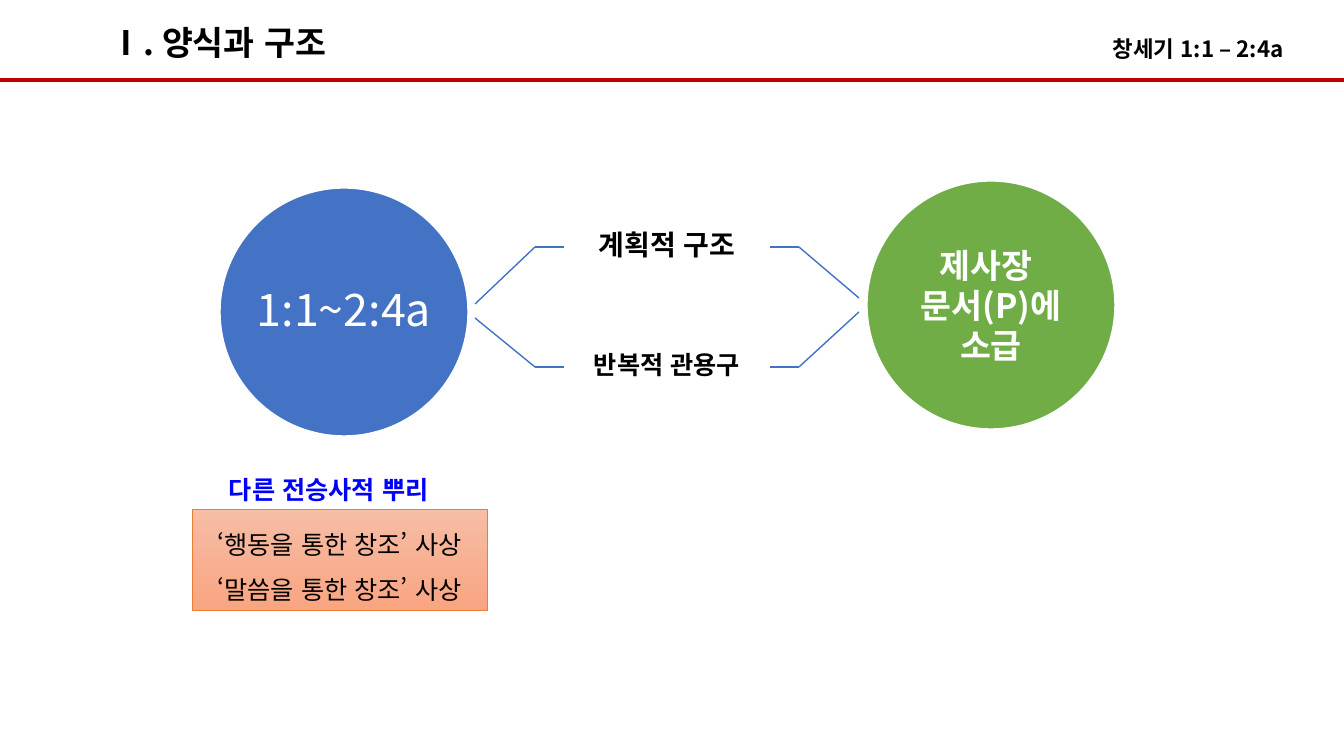
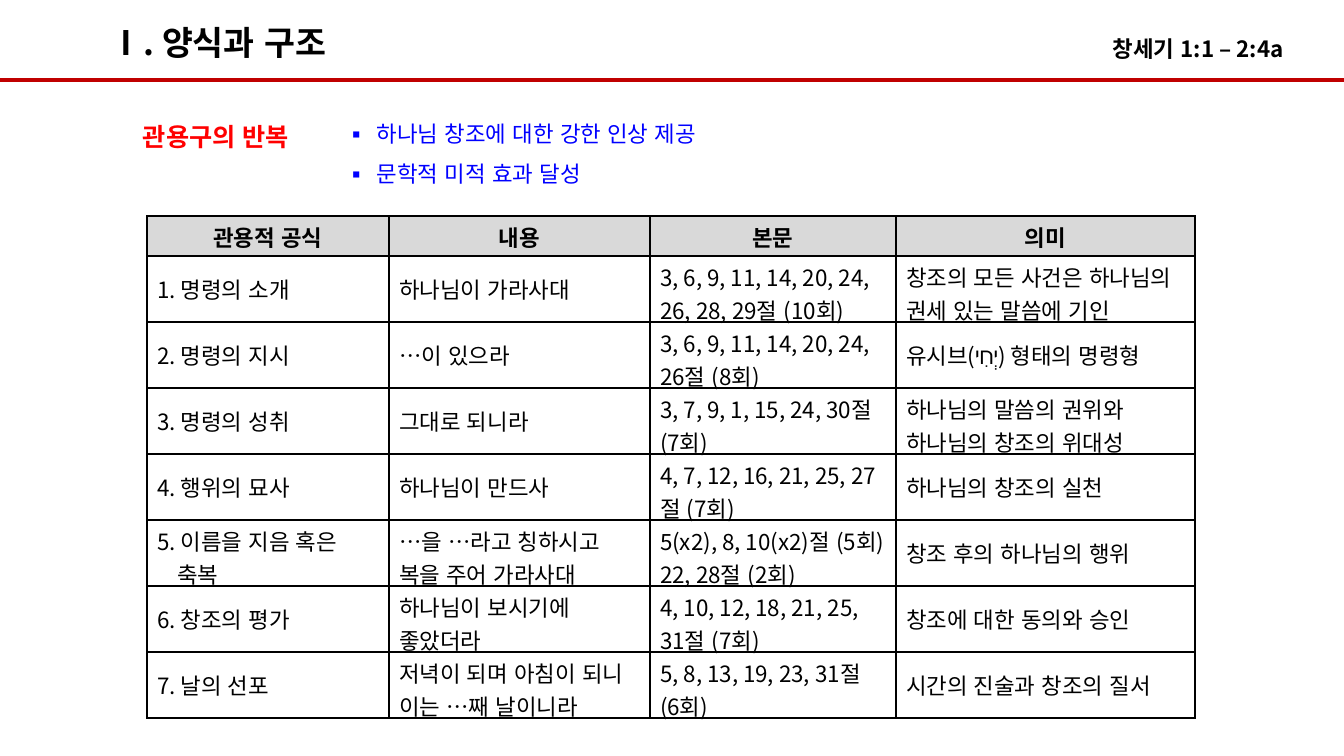
from pptx import Presentation
from pptx import util as u
from pptx.dml.color import RGBColor
from pptx.enum import lang, shapes, text
from pptx.oxml import parse_xml
from pptx.oxml.ns import nsdecls, qn

PX = 12192000 / 1344
FONT = "Noto Sans CJK KR"
BLACK = RGBColor(0x00, 0x00, 0x00)
WHITE = RGBColor(0xFF, 0xFF, 0xFF)
DARK_RED = RGBColor(0xC0, 0x00, 0x00)
RED = RGBColor(0xFF, 0x00, 0x00)
BRIGHT_BLUE = RGBColor(0x00, 0x00, 0xFF)
BLUE = RGBColor(0x44, 0x72, 0xC4)
GREEN = RGBColor(0x70, 0xAD, 0x47)
ORANGE = RGBColor(0xED, 0x7D, 0x31)
PEACH_TOP = RGBColor(0xF7, 0xBD, 0xA5)
PEACH_BOTTOM = RGBColor(0xF8, 0xA5, 0x82)
HEADER_GREY = RGBColor(0xD9, 0xD9, 0xD9)
CENTER = text.PP_ALIGN.CENTER
MIDDLE = text.MSO_ANCHOR.MIDDLE


def px(*lengths):
    """Turn pixel lengths into a list of EMU lengths."""
    return [u.Emu(round(length * PX)) for length in lengths]


def write(frame, words, size, color=BLACK, bold=False, align=None, spacing=None):
    """Fill a text frame and format every paragraph alike, for Latin and Korean."""
    frame.text = words
    frame.word_wrap = True
    for paragraph in frame.paragraphs:
        paragraph.alignment = align
        paragraph.line_spacing = spacing
        for run in paragraph.runs:
            run.font.size = u.Pt(size)
            run.font.bold = bold
            run.font.color.rgb = color
            run.font.language_id = lang.MSO_LANGUAGE_ID.KOREAN
            run.font.name = FONT
            latin = run.font._element.find(qn("a:latin"))
            latin.addnext(parse_xml(f'<a:ea {nsdecls("a")} typeface="{FONT}"/>'))


prs = Presentation()
prs.slide_width, prs.slide_height = px(1344, 756)
structure, formulas = [prs.slides.add_slide(prs.slide_layouts[6]) for _ in range(2)]
lines = []  # slide, colour, width in points, ends in px

# Header shared by both slides
for slide in (structure, formulas):
    passage = slide.shapes.add_textbox(*px(1103, 17, 209, 50))
    write(passage.text_frame, "창세기 1:1 – 2:4a", 16, bold=True, spacing=1.5)
    title = slide.shapes.add_textbox(*px(100, 17, 257, 50))
    write(title.text_frame, "Ⅰ. 양식과 구조", 24, bold=True)
    lines.append((slide, DARK_RED, 2.25, (0, 80, 1344, 80)))

# Slide 1: two circles joined through two labels
for left, top, color, words, size, bold, spacing in (
    (220, 188, BLUE, "1:1~2:4a", 32, False, 0.9),
    (867, 181, GREEN, "제사장 \n문서(P)에\n소급", 24, True, None),
):
    circle = structure.shapes.add_shape(shapes.MSO_SHAPE.OVAL, *px(left, top, 248, 248))
    circle.shadow.inherit = False
    circle.fill.solid()
    circle.fill.fore_color.rgb = color
    circle.line.color.rgb = WHITE
    circle.line.width = u.Pt(1)
    frame = circle.text_frame
    frame.margin_left = frame.margin_right = frame.margin_top = frame.margin_bottom = 0
    frame.vertical_anchor = MIDDLE
    write(frame, words, size, WHITE, bold, CENTER, spacing)

for label_y, left_y, right_y, words, size in (
    (247, 304, 298, "계획적 구조", 20),
    (367, 318, 312, "반복적 관용구", 18),
):
    label = structure.shapes.add_textbox(*px(564, label_y - 60, 206, 118))
    label.text_frame.vertical_anchor = MIDDLE
    write(label.text_frame, words, size, bold=True, align=CENTER, spacing=0.9)
    for circle_x, circle_y, bend_x, label_x in (
        (475, left_y, 535, 564),
        (859, right_y, 799, 770),
    ):
        lines.append((structure, BLUE, 1, (circle_x, circle_y, bend_x, label_y)))
        lines.append((structure, BLUE, 1, (bend_x, label_y, label_x, label_y)))

for slide, color, width, ends in lines:
    line = slide.shapes.add_connector(shapes.MSO_CONNECTOR.STRAIGHT, *px(*ends))
    line.line.color.rgb = color
    line.line.width = u.Pt(width)
    line._element.spPr.append(parse_xml(f'<a:effectLst {nsdecls("a")}/>'))

roots = structure.shapes.add_textbox(*px(219, 469, 242, 40))
write(roots.text_frame, "다른 전승사적 뿌리", 18, BRIGHT_BLUE, True)

ideas = structure.shapes.add_shape(shapes.MSO_SHAPE.RECTANGLE, *px(192, 509, 295, 101))
ideas.shadow.inherit = False
ideas.fill.gradient()
ideas.fill.gradient_angle = 270
for stop, color in zip(ideas.fill.gradient_stops, (PEACH_TOP, PEACH_BOTTOM)):
    stop.color.rgb = color
ideas.line.color.rgb = ORANGE
ideas.line.width = u.Pt(0.5)
ideas.text_frame.vertical_anchor = MIDDLE
ideas.text_frame.margin_left = ideas.text_frame.margin_right = 0
write(ideas.text_frame, "‘행동을 통한 창조’ 사상\n‘말씀을 통한 창조’ 사상", 18,
      align=CENTER, spacing=1.5)

# Slide 2: effects of the repetition, then the table of formulas
repetition = formulas.shapes.add_textbox(*px(133, 116, 182, 40))
write(repetition.text_frame, "관용구의 반복", 18, RED, True)

effects = formulas.shapes.add_textbox(*px(336, 102, 408, 87))
write(effects.text_frame, "하나님 창조에 대한 강한 인상 제공\n문학적 미적 효과 달성", 16,
      BRIGHT_BLUE, spacing=1.5)
hanging, = px(31)
for paragraph in effects.text_frame.paragraphs:
    properties = paragraph._p.get_or_add_pPr()
    properties.set("marL", str(hanging))
    properties.set("indent", str(-hanging))
    properties.append(parse_xml(f'<a:buFont {nsdecls("a")} typeface="{FONT}"/>'))
    properties.append(parse_xml(f'<a:buChar {nsdecls("a")} char="▪"/>'))

ROWS = (
    ("관용적 공식", "내용", "본문", "의미"),
    ("1. 명령의 소개", "하나님이 가라사대",
     "3, 6, 9, 11, 14, 20, 24, 26, 28, 29절 (10회)",
     "창조의 모든 사건은 하나님의 권세 있는 말씀에 기인"),
    ("2. 명령의 지시", "…이 있으라",
     "3, 6, 9, 11, 14, 20, 24, 26절 (8회)", "유시브(יְחִי) 형태의 명령형"),
    ("3. 명령의 성취", "그대로 되니라",
     "3, 7, 9, 1, 15, 24, 30절 (7회)", "하나님의 말씀의 권위와 하나님의 창조의 위대성"),
    ("4. 행위의 묘사", "하나님이 만드사",
     "4, 7, 12, 16, 21, 25, 27절 (7회)", "하나님의 창조의 실천"),
    ("5. 이름을 지음 혹은\n축복", "…을 …라고 칭하시고 복을 주어 가라사대",
     "5(x2), 8, 10(x2)절 (5회) 22, 28절 (2회)", "창조 후의 하나님의 행위"),
    ("6. 창조의 평가", "하나님이 보시기에 좋았더라",
     "4, 10, 12, 18, 21, 25, 31절 (7회)", "창조에 대한 동의와 승인"),
    ("7. 날의 선포", "저녁이 되며 아침이 되니 이는 …째 날이니라",
     "5, 8, 13, 19, 23, 31절 (6회)", "시간의 진술과 창조의 질서"),
)
COLUMN_WIDTHS = px(242, 261, 246, 299)
HEADER_HEIGHT, ROW_HEIGHT, CONTINUATION = px(40, 66, 20)

table = formulas.shapes.add_table(len(ROWS), 4, *px(147, 216, 1048, 502)).table
table.horz_banding = False
for column, width in zip(table.columns, COLUMN_WIDTHS):
    column.width = width
for r, row in enumerate(ROWS):
    is_header = r == 0
    table.rows[r].height = HEADER_HEIGHT if is_header else ROW_HEIGHT
    for c, words in enumerate(row):
        cell = table.cell(r, c)
        cell.vertical_anchor = MIDDLE
        write(cell.text_frame, words, 16, bold=is_header, align=CENTER if is_header else None)
        for paragraph in cell.text_frame.paragraphs[1:]:
            paragraph._p.get_or_add_pPr().set("marL", str(CONTINUATION))
        cell_properties = cell._tc.get_or_add_tcPr()
        for side in ("lnL", "lnR", "lnT", "lnB"):
            cell_properties.append(parse_xml(
                f'<a:{side} {nsdecls("a")} w="12700"><a:solidFill>'
                f'<a:srgbClr val="{BLACK}"/></a:solidFill></a:{side}>'))
        if is_header:
            cell.fill.solid()
            cell.fill.fore_color.rgb = HEADER_GREY
        else:
            cell.fill.background()

prs.save("out.pptx")
